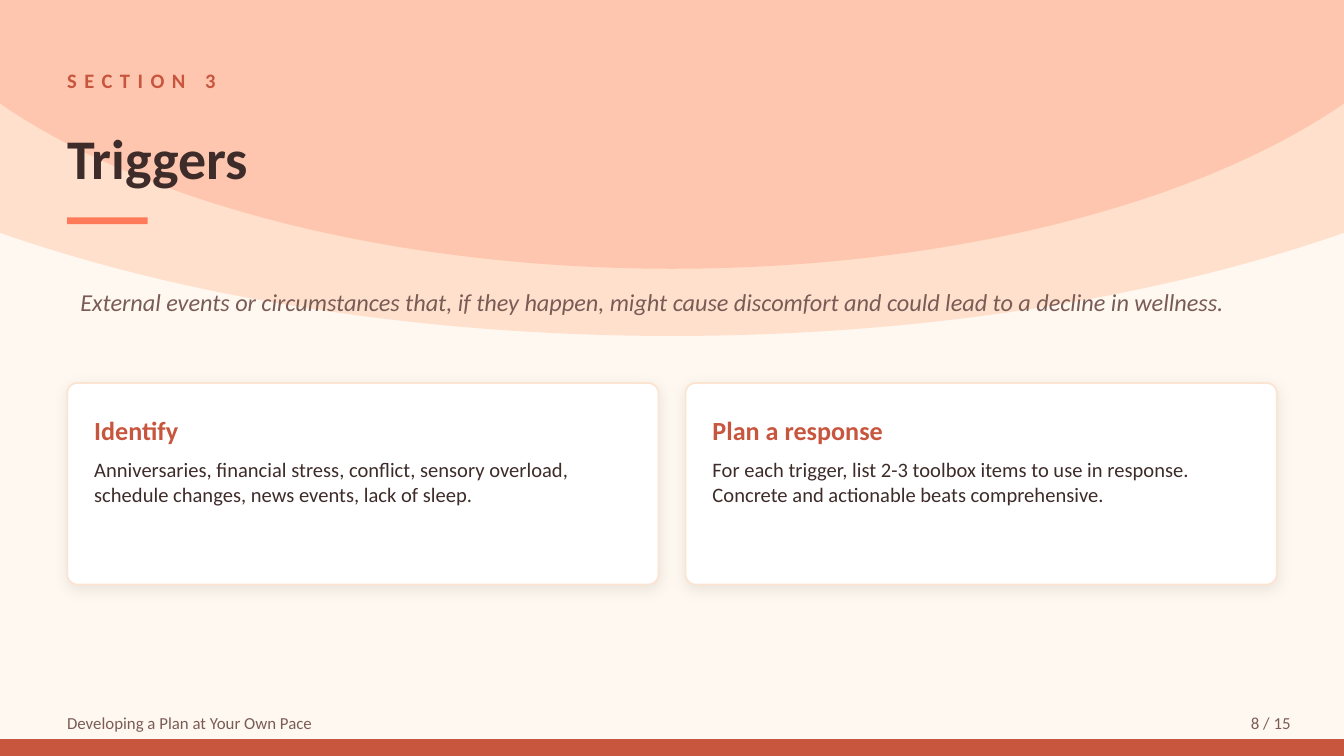
from lxml.etree import SubElement
from pptx import Presentation
from pptx.dml.color import RGBColor
from pptx.enum.shapes import MSO_SHAPE as Preset
from pptx.enum.text import MSO_ANCHOR as Anchor, PP_ALIGN as Align
from pptx.oxml.ns import qn
from pptx.util import Cm, Pt

COLORS = {
    "background": "FFF8F0",
    "peach": "FFB48A",
    "coral": "FF7A59",
    "rust": "C8553D",
    "dark": "3D2C29",
    "muted": "7A5C57",
    "card": "FFFFFF",
    "card_border": "FBE4D2",
    "shadow": "000000",
}
FONT = "Calibri"
WIDTH, HEIGHT = 25.4, 14.29
MARGIN = 1.27
CONTENT_WIDTH = WIDTH - 2 * MARGIN
CARDS = [
    ("Identify",
     "Anniversaries, financial stress, conflict, sensory overload, "
     "schedule changes, news events, lack of sleep."),
    ("Plan a response",
     "For each trigger, list 2-3 toolbox items to use in response. "
     "Concrete and actionable beats comprehensive."),
]


def add_filled(slide, preset, box, color, opacity=None):
    """Add a borderless preset shape, optionally see-through (percent)."""
    shape = slide.shapes.add_shape(preset, *map(Cm, box))
    shape.shadow.inherit = False
    shape.fill.solid()
    shape.fill.fore_color.rgb = RGBColor.from_string(COLORS[color])
    shape.line.fill.background()
    if opacity is not None:
        rgb = shape.fill._xPr.find(f".//{qn('a:srgbClr')}")
        SubElement(rgb, qn("a:alpha"), val=str(opacity * 1000))
    return shape


def add_text(slide, box, text, size, color, bold=False, italic=False,
             align=Align.LEFT, anchor=Anchor.MIDDLE, inset=True, spacing=None):
    """Add a wrapped single-paragraph text box."""
    frame = slide.shapes.add_textbox(*map(Cm, box)).text_frame
    frame.word_wrap = True
    frame.vertical_anchor = anchor
    if not inset:
        frame.margin_left = frame.margin_right = 0
        frame.margin_top = frame.margin_bottom = 0
    paragraph = frame.paragraphs[0]
    paragraph.text = text
    paragraph.alignment = align
    font = paragraph.font
    font.name, font.size = FONT, Pt(size)
    font.bold, font.italic = bold, italic
    font.color.rgb = RGBColor.from_string(COLORS[color])
    if spacing:
        paragraph.runs[0].font._element.set("spc", str(spacing * 100))


def add_soft_shadow(shape):
    """Give a shape a faint shadow that falls straight down."""
    effects = shape._element.spPr.find(qn("a:effectLst"))
    shadow = SubElement(effects, qn("a:outerShdw"), blurRad=str(Pt(8)),
                        dist=str(Pt(2)), dir="5400000", algn="bl",
                        rotWithShape="0")
    rgb = SubElement(shadow, qn("a:srgbClr"), val=COLORS["shadow"])
    SubElement(rgb, qn("a:alpha"), val="8000")


def add_backdrop(slide, box):
    """Draw two arcs centred over the top of the box."""
    left, top, width, _ = box
    arcs = [(40.64, 17.78, 6.35, "peach", 35), (30.48, 13.97, 5.08, "coral", 25)]
    for arc_width, arc_height, depth, color, opacity in arcs:
        arc_box = (left + (width - arc_width) / 2, top + depth - arc_height,
                   arc_width, arc_height)
        add_filled(slide, Preset.OVAL, arc_box, color, opacity)


def add_footer(slide, box, title, page):
    """Place the footer title and page number above a bar at the box bottom."""
    left, top, width, height = box
    bar, row = 0.32, 0.64
    add_filled(slide, Preset.RECTANGLE,
               (left, top + height - bar, width, bar), "rust")
    add_text(slide, (left + 1.02, top, 15.24, row), title, 9, "muted")
    add_text(slide, (left + width - 2.54, top, 1.78, row), page, 9, "muted",
             align=Align.RIGHT)


def add_header(slide, box, label, title):
    """Stack the section label, title and accent rule in the box."""
    left, top, width, _ = box
    add_text(slide, (left, top, width, 0.76), label, 11, "rust", bold=True,
             inset=False, spacing=4)
    add_text(slide, (left, top + 0.76, width, 2.16), title, 30, "dark",
             bold=True, inset=False)
    add_filled(slide, Preset.RECTANGLE, (left, top + 2.97, 1.52, 0.13), "coral")


def add_card(slide, box, heading, body):
    """Draw a rounded card with a heading and body text."""
    left, top, width, height = box
    card = add_filled(slide, Preset.ROUNDED_RECTANGLE, box, "card")
    card.adjustments[0] = 0.05
    card.line.color.rgb = RGBColor.from_string(COLORS["card_border"])
    card.line.width = Pt(1)
    add_soft_shadow(card)
    padding = 0.51
    text_left, text_width = left + padding, width - 2 * padding
    add_text(slide, (text_left, top + 0.38, text_width, 1.02), heading, 14,
             "rust", bold=True, inset=False)
    add_text(slide, (text_left, top + 1.4, text_width, 2.03), body, 11, "dark",
             anchor=Anchor.TOP, inset=False)


def add_card_row(slide, box, cards, gap=0.51):
    """Share the box width equally among the cards."""
    left, top, width, height = box
    card_width = (width - gap * (len(cards) - 1)) / len(cards)
    for index, (heading, body) in enumerate(cards):
        card_left = left + index * (card_width + gap)
        add_card(slide, (card_left, top, card_width, height), heading, body)


def main():
    """Build and save the presentation."""
    presentation = Presentation()
    presentation.slide_width, presentation.slide_height = Cm(WIDTH), Cm(HEIGHT)
    slide = presentation.slides.add_slide(presentation.slide_layouts[6])
    background = slide.background.fill
    background.solid()
    background.fore_color.rgb = RGBColor.from_string(COLORS["background"])

    add_backdrop(slide, (0, 0, WIDTH, HEIGHT))
    add_footer(slide, (0, 13.34, WIDTH, HEIGHT - 13.34),
               "Developing a Plan at Your Own Pace", "8 / 15")
    add_header(slide, (MARGIN, 1.14, CONTENT_WIDTH, 3.1), "SECTION 3", "Triggers")
    add_text(slide, (MARGIN, 4.95, CONTENT_WIDTH, 1.52),
             "External events or circumstances that, if they happen, might cause "
             "discomfort and could lead to a decline in wellness.",
             13, "muted", italic=True)
    add_card_row(slide, (MARGIN, 7.24, CONTENT_WIDTH, 3.81), CARDS)
    presentation.save("out.pptx")


if __name__ == "__main__":
    main()
